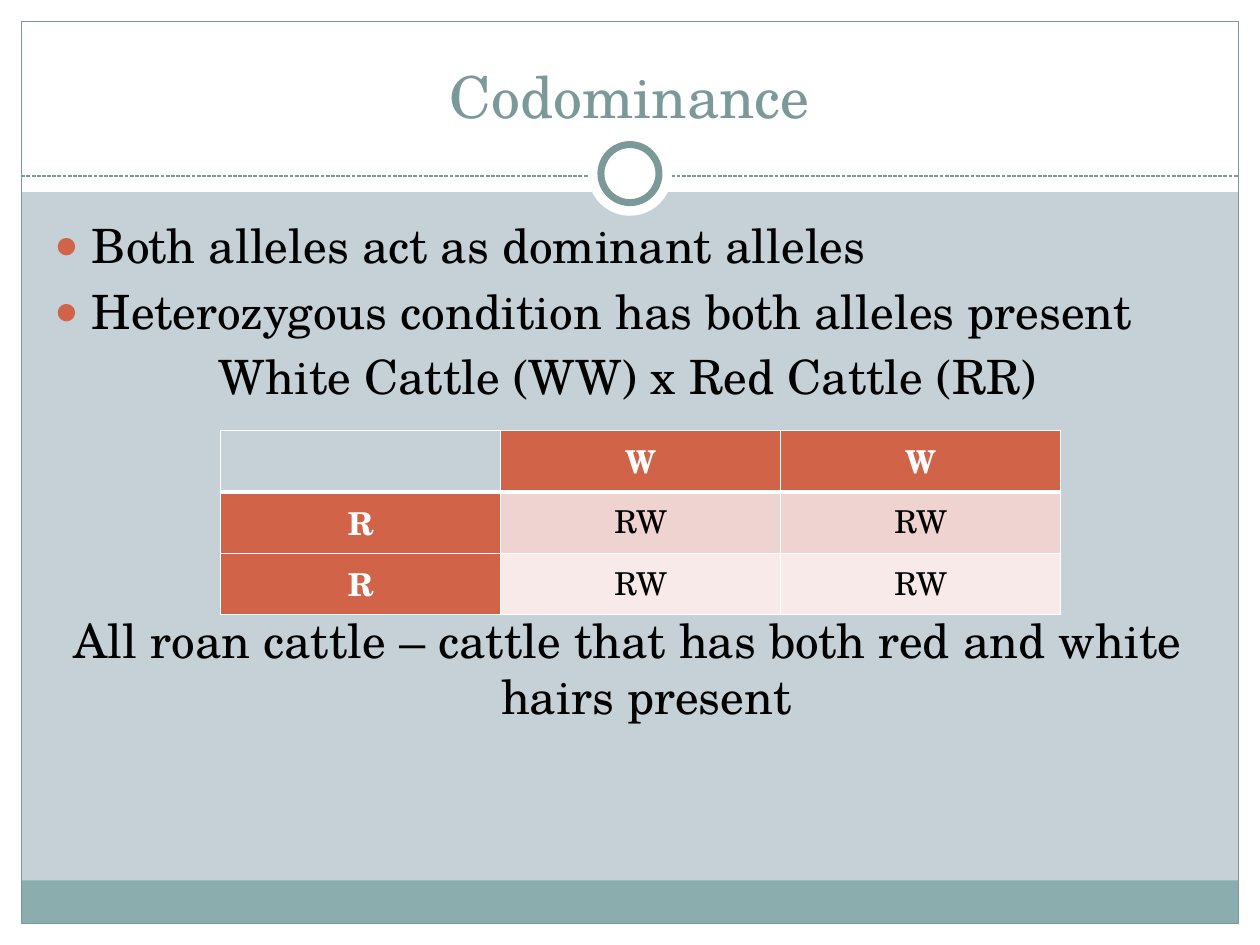
from lxml import etree
from pptx import Presentation
from pptx.dml.color import RGBColor
from pptx.enum.dml import MSO_LINE
from pptx.enum.shapes import MSO_CONNECTOR, MSO_SHAPE
from pptx.enum.text import MSO_ANCHOR, MSO_AUTO_SIZE, PP_ALIGN
from pptx.oxml.ns import qn
from pptx.util import Cm, Pt

RECT, OVAL = MSO_SHAPE.RECTANGLE, MSO_SHAPE.OVAL
STRAIGHT, DASH = MSO_CONNECTOR.STRAIGHT, MSO_LINE.SQUARE_DOT
CENTER, LEFT = PP_ALIGN.CENTER, PP_ALIGN.LEFT
TOP, BOTTOM = MSO_ANCHOR.TOP, MSO_ANCHOR.BOTTOM
NO_FIT = MSO_AUTO_SIZE.NONE

FONT = "TeX Gyre Schola"
COLORS = {
    "background": "C5D1D7", "white": "FFFFFF", "black": "000000",
    "teal": "7C999A", "footer": "8CADAE", "accent": "D16349",
    "pink": "EED3D0", "pale": "F7EAE9",
}
WIDTH, HEIGHT, MARGIN = 25.4, 19.05, 0.43

# Text, bulleted or centred, space before in points
BODY = [
    ("Both alleles act as dominant alleles", True, 5),
    ("Heterozygous condition has both alleles present", True, 5),
    ("White Cattle (WW) x Red Cattle (RR)", False, 5),
    ("All roan cattle – cattle that has both red and white hairs present", False, 118),
]
SQUARE = [["", "W", "W"], ["R", "RW", "RW"], ["R", "RW", "RW"]]


def rgb(name):
    return RGBColor.from_string(COLORS[name])


def set_font(para, size, color, bold=False):
    font = para.font
    font.name, font.size, font.bold = FONT, Pt(size), bold
    font.color.rgb = rgb(color)


def add_figure(page, kind, left, top, width, height, fill=None, line=None, weight=0.75):
    figure = page.shapes.add_shape(kind, Cm(left), Cm(top), Cm(width), Cm(height))
    figure.shadow.inherit = False
    if fill:
        figure.fill.solid()
        figure.fill.fore_color.rgb = rgb(fill)
    else:
        figure.fill.background()
    if line:
        figure.line.color.rgb = rgb(line)
        figure.line.width = Pt(weight)
    else:
        figure.line.fill.background()


def add_dashed_rule(page, top):
    rule = page.shapes.add_connector(
        STRAIGHT, Cm(MARGIN), Cm(top), Cm(WIDTH - MARGIN), Cm(top))
    rule.line.color.rgb = rgb("teal")
    rule.line.width = Pt(0.75)
    rule.line.dash_style = DASH
    etree.SubElement(rule.element.spPr, qn("a:effectLst"))


def add_frame(page):
    # White margins, footer band and outline
    add_figure(page, RECT, 0, HEIGHT - MARGIN, WIDTH, MARGIN, "white")
    add_figure(page, RECT, 0, 0, WIDTH, 3.87, "white")
    for left in (0, WIDTH - MARGIN):
        add_figure(page, RECT, left, 0, MARGIN, HEIGHT, "white")
    inner = WIDTH - 2 * MARGIN
    add_figure(page, RECT, MARGIN, 17.75, inner, 0.87, "footer")
    add_figure(page, RECT, MARGIN, MARGIN, inner, HEIGHT - 2 * MARGIN, line="teal")
    # Divider with its ring
    add_dashed_rule(page, 3.55)
    for size, line in ((1.7, None), (1.17, "teal")):
        add_figure(page, OVAL, (WIDTH - size) / 2, 3.5 - size / 2, size, size,
                   "white", line, 4)


def place(holder, left, top, width, height, anchor):
    holder.left, holder.top = Cm(left), Cm(top)
    holder.width, holder.height = Cm(width), Cm(height)
    holder.text_frame.auto_size = NO_FIT
    holder.text_frame.vertical_anchor = anchor
    # Bring the text in front of the frame
    holder.element.getparent().append(holder.element)


def set_bullet(para, bulleted):
    props = para._p.get_or_add_pPr()
    props.set("marL", str(Cm(0.76)))
    props.set("indent", str(-Cm(0.76)))
    if not bulleted:
        etree.SubElement(props, qn("a:buNone"))
        return
    color = etree.SubElement(props, qn("a:buClr"))
    etree.SubElement(color, qn("a:srgbClr"), val=COLORS["accent"])
    etree.SubElement(props, qn("a:buSzPct"), val="85000")
    etree.SubElement(props, qn("a:buChar"), char="●")


def fill_title(title):
    place(title, 0.84, 0.64, 23.7, 2.11, BOTTOM)
    title.text_frame.text = "Codominance"
    para = title.text_frame.paragraphs[0]
    para.alignment = CENTER
    set_font(para, 33, "teal")


def fill_body(body):
    place(body, 0.84, 4.24, 23.62, 12.7, TOP)
    frame = body.text_frame
    frame.text = "\n".join(text for text, _, _ in BODY)
    for para, (_, bulleted, gap) in zip(frame.paragraphs, BODY):
        set_bullet(para, bulleted)
        para.alignment = LEFT if bulleted else CENTER
        para.line_spacing = 1.0
        para.space_before = Pt(gap)
        set_font(para, 27, "black")


def set_borders(cell, top, bottom):
    props = cell._tc.get_or_add_tcPr()
    for side, weight in (("L", 1), ("R", 1), ("T", top), ("B", bottom)):
        line = etree.SubElement(props, qn(f"a:ln{side}"), w=str(Pt(weight)))
        fill = etree.SubElement(line, qn("a:solidFill"))
        etree.SubElement(fill, qn("a:srgbClr"), val=COLORS["white"])


def cell_fill(row, column):
    if row == column == 0:
        return "background"
    if row == 0 or column == 0:
        return "accent"
    return "pink" if row == 1 else "pale"


def add_square(page):
    table = page.shapes.add_table(
        3, 3, Cm(4.45), Cm(8.68), Cm(16.93), Cm(3.1)).table
    for row, texts in enumerate(SQUARE):
        for column, text in enumerate(texts):
            cell = table.cell(row, column)
            set_borders(cell, 3 if row == 1 else 1, 3 if row == 0 else 1)
            cell.fill.solid()
            cell.fill.fore_color.rgb = rgb(cell_fill(row, column))
            cell.text = text
            para = cell.text_frame.paragraphs[0]
            para.alignment = CENTER
            header = row == 0 or column == 0
            set_font(para, 18, "white" if header else "black", header)


def main():
    deck = Presentation()
    deck.slide_width, deck.slide_height = Cm(WIDTH), Cm(HEIGHT)
    page = deck.slides.add_slide(deck.slide_layouts[1])
    page.background.fill.solid()
    page.background.fill.fore_color.rgb = rgb("background")
    add_frame(page)
    fill_title(page.shapes.title)
    fill_body(page.placeholders[1])
    add_square(page)
    deck.save("out.pptx")


if __name__ == "__main__":
    main()
